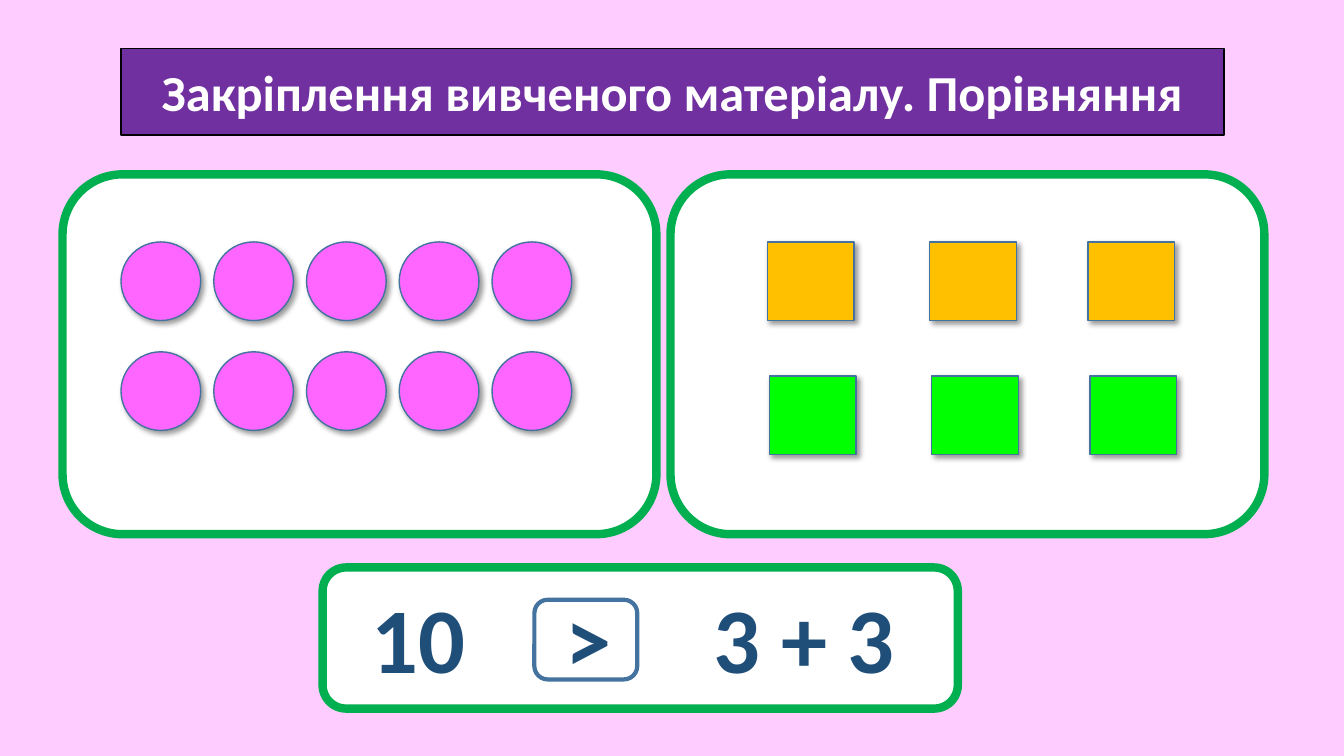
import lxml.etree
import pptx
import pptx.dml.color
import pptx.enum.shapes
import pptx.enum.text
import pptx.oxml.ns
import pptx.util

PX = 9144  # 100 px to the inch
RGB = pptx.dml.color.RGBColor
SHAPE = pptx.enum.shapes.MSO_SHAPE

PINK = RGB(0xFF, 0xCC, 0xFF)
WHITE = RGB(0xFF, 0xFF, 0xFF)
BLACK = RGB(0, 0, 0)
PURPLE = RGB(0x70, 0x30, 0xA0)
GREEN = RGB(0x00, 0xB0, 0x50)
STEEL = RGB(0x43, 0x73, 0x9E)
NAVY = RGB(0x1F, 0x4E, 0x79)
MAGENTA = RGB(0xFF, 0x66, 0xFF)
ORANGE = RGB(0xFF, 0xC0, 0x00)
LIME = RGB(0x00, 0xFF, 0x00)

PANELS = [(62, 173, 589, 357), (665, 173, 589, 357), (320, 563, 630, 140)]
TERMS = [(" 10", 338, 158), (" 3 + 3", 677, 248), (">", 551, 62)]
SQUARE_ROWS = [(761, 240, ORANGE), (763, 373, LIME)]
SQUARE_OFFSETS = [0, 161, 318]


def emu(*lengths):
    return [length * PX for length in lengths]


def add_figure(slide, kind, place, fill, line, width):
    shape = slide.shapes.add_shape(kind, *emu(*place))
    shape.shadow.inherit = False
    if fill is None:
        shape.fill.background()
    else:
        shape.fill.solid()
        shape.fill.fore_color.rgb = fill
    shape.line.color.rgb = line
    shape.line.width = pptx.util.Pt(width)
    return shape


def add_counter(slide, kind, place, fill):
    """Add a counting figure with a soft shadow to the lower right."""
    shape = add_figure(slide, kind, place, fill, STEEL, 1)
    qn = pptx.oxml.ns.qn
    effects = shape.element.spPr.find(qn("a:effectLst"))
    shadow = lxml.etree.SubElement(effects, qn("a:outerShdw"))
    settings = {"blurRad": pptx.util.Pt(4), "dist": pptx.util.Pt(3),
                "dir": 45 * 60000, "algn": "tl", "rotWithShape": 0}
    for name, value in settings.items():
        shadow.set(name, str(value))
    color = lxml.etree.SubElement(shadow, qn("a:srgbClr"), val=str(BLACK))
    lxml.etree.SubElement(color, qn("a:alpha"), val="40000")


def write(frame, text, size, color):
    para = frame.paragraphs[0]
    span = para.add_run()
    span.text = text
    font = {"name": "Calibri", "size": pptx.util.Pt(size), "bold": True}
    for name, value in font.items():
        setattr(span.font, name, value)
    span.font.color.rgb = color
    return para


def add_title(slide, text):
    banner = add_figure(slide, SHAPE.RECTANGLE, (120, 48, 1094, 86), PURPLE, BLACK, 1)
    banner.text_frame.vertical_anchor = pptx.enum.text.MSO_ANCHOR.MIDDLE
    para = write(banner.text_frame, text, 36, WHITE)
    para.alignment = pptx.enum.text.PP_ALIGN.CENTER


def add_term(slide, text, left, width):
    box = slide.shapes.add_textbox(*emu(left, 572, width, 121))
    box.text_frame.word_wrap = False
    box.text_frame.auto_size = pptx.enum.text.MSO_AUTO_SIZE.SHAPE_TO_FIT_TEXT
    write(box.text_frame, text, 66, NAVY)


def main():
    deck = pptx.Presentation()
    deck.slide_width, deck.slide_height = emu(1333, 750)
    slide = deck.slides.add_slide(deck.slide_layouts[6])
    slide.background.fill.solid()
    slide.background.fill.fore_color.rgb = PINK

    for place in PANELS:
        add_figure(slide, SHAPE.ROUNDED_RECTANGLE, place, WHITE, GREEN, 6)
    add_title(slide, "Закріплення вивченого матеріалу. Порівняння")

    add_figure(slide, SHAPE.ROUNDED_RECTANGLE, (530, 595, 102, 79), None, STEEL, 3)
    for text, left, width in TERMS:
        add_term(slide, text, left, width)

    for row in range(2):
        for column in range(5):
            place = (120 + 92 * column, 240 + 109 * row, 79, 78)
            add_counter(slide, SHAPE.OVAL, place, MAGENTA)
    for left, top, fill in SQUARE_ROWS:
        for offset in SQUARE_OFFSETS:
            add_counter(slide, SHAPE.RECTANGLE, (left + offset, top, 86, 78), fill)

    deck.save("out.pptx")


if __name__ == "__main__":
    main()
